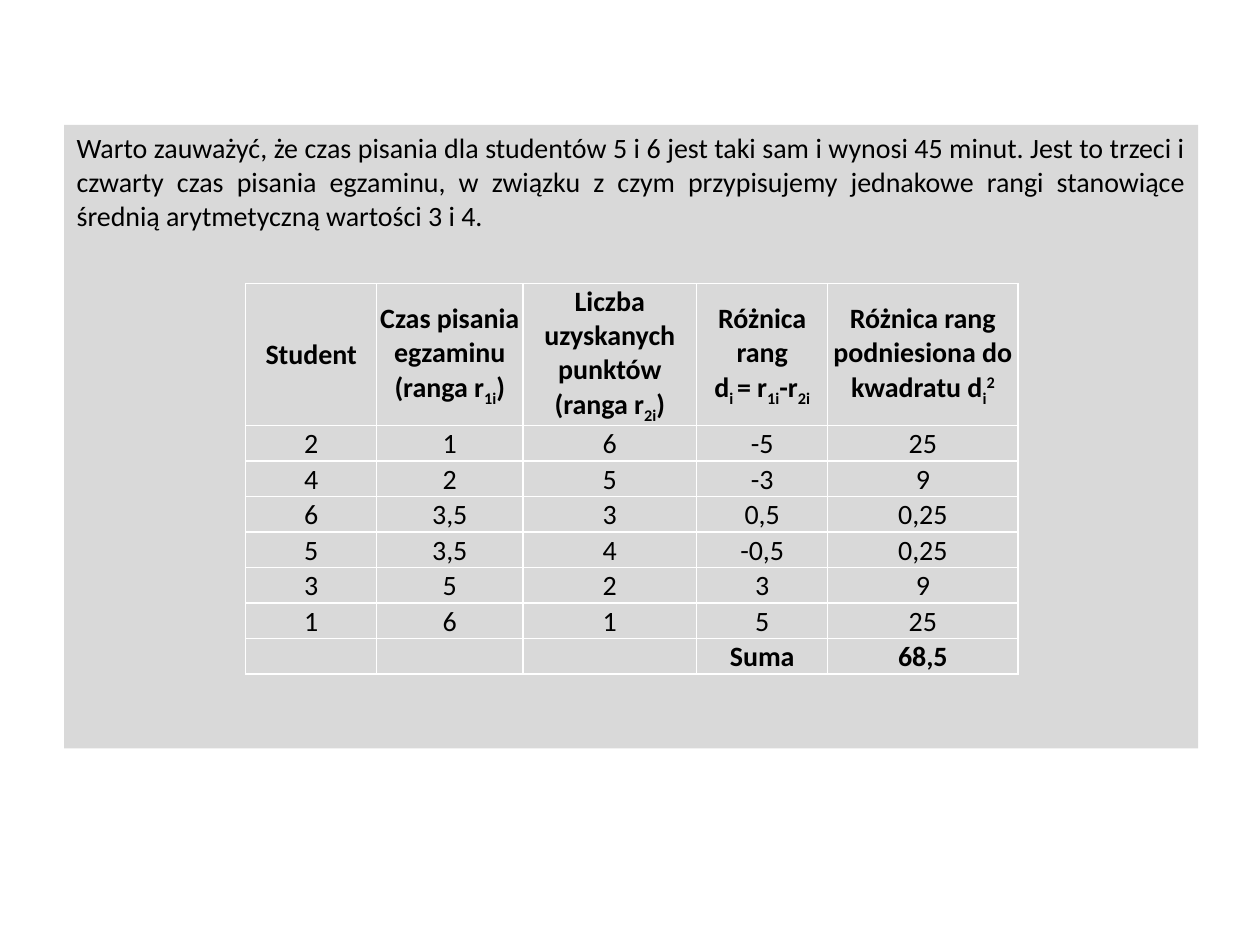
from typing import NamedTuple

from lxml import etree
from pptx import Presentation
from pptx.dml.color import RGBColor
from pptx.enum import shapes, text
from pptx.oxml import ns
from pptx.util import Inches, Pt

GREY = RGBColor(0xD9, 0xD9, 0xD9)
BLACK = RGBColor(0, 0, 0)
WHITE = RGBColor(0xFF, 0xFF, 0xFF)
FONT = "Calibri"
SIZE = Pt(16)
SUB, SUPER = -25, 30


class Part(NamedTuple):
    wording: str
    baseline: int = 0


class Row(NamedTuple):
    student: str
    time_rank: str
    points_rank: str
    difference: str
    square: str


NOTE = (
    "Warto zauważyć, że czas pisania dla studentów 5 i 6 jest taki sam i wynosi 45 minut. "
    "Jest to trzeci i czwarty czas pisania egzaminu, w związku z czym przypisujemy "
    "jednakowe rangi stanowiące średnią arytmetyczną wartości 3 i 4."
)
HEADINGS = [
    [[Part("Student")]],
    [[Part("Czas pisania egzaminu (ranga r"), Part("1i", SUB), Part(")")]],
    [[Part("Liczba uzyskanych punktów (ranga r"), Part("2i", SUB), Part(")")]],
    [
        [Part("Różnica rang")],
        [Part("d"), Part("i ", SUB), Part("= r"), Part("1i", SUB), Part("-r"), Part("2i", SUB)],
    ],
    [[Part("Różnica rang podniesiona do kwadratu d"), Part("i", SUB), Part("2", SUPER)]],
]
ROWS = [
    Row("2", "1", "6", "-5", "25"),
    Row("4", "2", "5", "-3", "9"),
    Row("6", "3,5", "3", "0,5", "0,25"),
    Row("5", "3,5", "4", "-0,5", "0,25"),
    Row("3", "5", "2", "3", "9"),
    Row("1", "6", "1", "5", "25"),
    Row("", "", "", "Suma", "68,5"),
]
COLUMN_WIDTHS = [1.04, 1.16, 1.38, 1.04, 1.51]
HEADING_HEIGHT, ROW_HEIGHT = 1.08, 0.28


def add_part(paragraph, part: Part, bold: bool = False) -> None:
    run = paragraph.add_run()
    run.text = part.wording
    run.font.name = FONT
    run.font.size = SIZE
    run.font.bold = bold
    run.font.color.rgb = BLACK
    if part.baseline:
        run._r.get_or_add_rPr().set("baseline", str(part.baseline * 1000))


def add_borders(cell) -> None:
    properties = cell._tc.get_or_add_tcPr()
    for position, side in enumerate(("lnL", "lnR", "lnT", "lnB")):
        border = etree.Element(ns.qn(f"a:{side}"), w=str(Pt(1)))
        fill = etree.SubElement(border, ns.qn("a:solidFill"))
        etree.SubElement(fill, ns.qn("a:srgbClr"), val=str(WHITE))
        properties.insert(position, border)


def fill_cell(cell, paragraphs: list[list[Part]], bold: bool, anchor) -> None:
    cell.fill.solid()
    cell.fill.fore_color.rgb = GREY
    cell.margin_left = cell.margin_right = cell.margin_top = Inches(0.01)
    cell.margin_bottom = 0
    cell.vertical_anchor = anchor
    add_borders(cell)
    frame = cell.text_frame
    for index, parts in enumerate(paragraphs):
        paragraph = frame.add_paragraph() if index else frame.paragraphs[0]
        paragraph.alignment = text.PP_ALIGN.CENTER
        for part in parts:
            add_part(paragraph, part, bold)
        if not parts:
            etree.SubElement(paragraph._p, ns.qn("a:endParaRPr"), sz="1600")


def add_note(slide) -> None:
    panel = slide.shapes.add_shape(
        shapes.MSO_SHAPE.RECTANGLE, Inches(0.51), Inches(0.99), Inches(9), Inches(4.95)
    )
    panel.shadow.inherit = False
    panel.fill.solid()
    panel.fill.fore_color.rgb = GREY
    panel.line.fill.background()
    frame = panel.text_frame
    frame.word_wrap = True
    frame.vertical_anchor = text.MSO_ANCHOR.TOP
    paragraph = frame.paragraphs[0]
    paragraph.alignment = text.PP_ALIGN.JUSTIFY
    paragraph.space_before = Pt(3.2)
    add_part(paragraph, Part(NOTE))


def add_rank_table(slide) -> None:
    ranks = slide.shapes.add_table(
        len(ROWS) + 1, len(COLUMN_WIDTHS), Inches(1.95), Inches(2.25),
        Inches(sum(COLUMN_WIDTHS)), Inches(HEADING_HEIGHT + ROW_HEIGHT * len(ROWS)),
    ).table
    for column, width in zip(ranks.columns, COLUMN_WIDTHS):
        column.width = Inches(width)
    for index, row in enumerate(ranks.rows):
        row.height = Inches(ROW_HEIGHT if index else HEADING_HEIGHT)
    for column, heading in enumerate(HEADINGS):
        fill_cell(ranks.cell(0, column), heading, True, text.MSO_ANCHOR.MIDDLE)
    for index, row in enumerate(ROWS, start=1):
        for column, value in enumerate(row):
            parts = [Part(value)] if value else []
            fill_cell(ranks.cell(index, column), [parts], index == len(ROWS), text.MSO_ANCHOR.BOTTOM)


def main() -> None:
    deck = Presentation()
    deck.slide_width, deck.slide_height = Inches(10), Inches(7.5)
    slide = deck.slides.add_slide(deck.slide_layouts[6])
    add_note(slide)
    add_rank_table(slide)
    deck.save("out.pptx")


if __name__ == "__main__":
    main()
